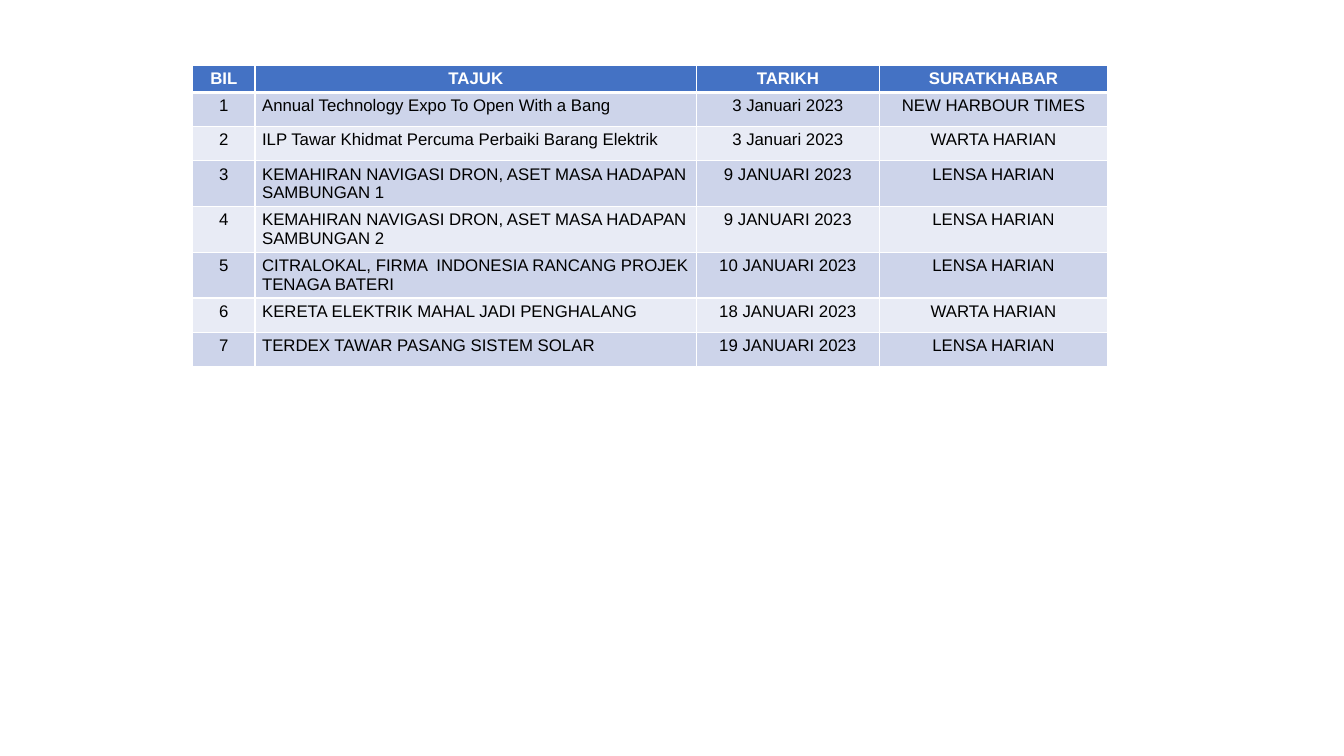
from typing import NamedTuple

from lxml.etree import SubElement
from pptx import Presentation
from pptx.dml.color import RGBColor
from pptx.enum.text import PP_ALIGN as Align
from pptx.oxml.ns import qn
from pptx.table import _Cell as Cell
from pptx.util import Inches, Pt

COLOURS = {
    "header": "4472C4",
    "odd_row": "CDD4EA",
    "even_row": "E8EBF5",
    "rule": "FFFFFF",
    "header_text": "FFFFFF",
    "body_text": "000000",
}
FONT, FONT_SIZE = "Arial", Pt(12)
THIN_RULE, HEADER_RULE = Pt(1), Pt(3)
HEADER_HEIGHT, ROW_HEIGHT = 0.22, 0.34
TABLE_LEFT, TABLE_TOP = 1.91, 0.65


class Column(NamedTuple):
    heading: str
    width: float
    body_align: Align = Align.CENTER


class Article(NamedTuple):
    number: str
    title: str
    date: str
    newspaper: str


COLUMNS = [
    Column("BIL", 0.62),
    Column("TAJUK", 4.38, Align.LEFT),
    Column("TARIKH", 1.81),
    Column("SURATKHABAR", 2.27),
]
ARTICLES = [
    Article("1", "Annual Technology Expo To Open With a Bang", "3 Januari 2023", "NEW HARBOUR TIMES"),
    Article("2", "ILP Tawar Khidmat Percuma Perbaiki Barang Elektrik", "3 Januari 2023", "WARTA HARIAN"),
    Article("3", "KEMAHIRAN NAVIGASI DRON, ASET MASA HADAPAN SAMBUNGAN 1", "9 JANUARI 2023", "LENSA HARIAN"),
    Article("4", "KEMAHIRAN NAVIGASI DRON, ASET MASA HADAPAN SAMBUNGAN 2", "9 JANUARI 2023", "LENSA HARIAN"),
    Article("5", "CITRALOKAL, FIRMA  INDONESIA RANCANG PROJEK TENAGA BATERI", "10 JANUARI 2023", "LENSA HARIAN"),
    Article("6", "KERETA ELEKTRIK MAHAL JADI PENGHALANG", "18 JANUARI 2023", "WARTA HARIAN"),
    Article("7", "TERDEX TAWAR PASANG SISTEM SOLAR", "19 JANUARI 2023", "LENSA HARIAN"),
]


def draw_rules(cell: Cell, top: int, bottom: int) -> None:
    """Put a solid border on all four sides of the cell."""
    properties = cell._tc.get_or_add_tcPr()
    widths = {"a:lnL": THIN_RULE, "a:lnR": THIN_RULE, "a:lnT": top, "a:lnB": bottom}
    for side, width in widths.items():
        rule = SubElement(properties, qn(side), w=str(int(width)))
        SubElement(SubElement(rule, qn("a:solidFill")), qn("a:srgbClr"), val=COLOURS["rule"])


def fill_cell(cell: Cell, text: str, row: int, align: Align) -> None:
    is_header = row == 0
    draw_rules(
        cell,
        top=HEADER_RULE if row == 1 else THIN_RULE,
        bottom=HEADER_RULE if is_header else THIN_RULE,
    )
    band = "header" if is_header else "odd_row" if row % 2 else "even_row"
    cell.fill.solid()
    cell.fill.fore_color.rgb = RGBColor.from_string(COLOURS[band])
    cell.margin_left = cell.margin_right = Inches(0.07)
    cell.margin_top = cell.margin_bottom = Inches(0.04)
    cell.text_frame.text = text
    paragraph = cell.text_frame.paragraphs[0]
    paragraph.alignment = align
    font = paragraph.runs[0].font
    font.name, font.size, font.bold = FONT, FONT_SIZE, is_header
    font.color.rgb = RGBColor.from_string(COLOURS["header_text" if is_header else "body_text"])


def main() -> None:
    deck = Presentation()
    deck.slide_width, deck.slide_height = Inches(13.33), Inches(7.5)
    slide = deck.slides.add_slide(deck.slide_layouts[6])

    row_heights = [HEADER_HEIGHT] + [ROW_HEIGHT] * len(ARTICLES)
    clippings = slide.shapes.add_table(
        len(row_heights), len(COLUMNS),
        Inches(TABLE_LEFT), Inches(TABLE_TOP),
        Inches(sum(column.width for column in COLUMNS)), Inches(sum(row_heights)),
    ).table
    for row, height in enumerate(row_heights):
        clippings.rows[row].height = Inches(height)
    for index, column in enumerate(COLUMNS):
        clippings.columns[index].width = Inches(column.width)
        fill_cell(clippings.cell(0, index), column.heading, 0, Align.CENTER)
        for row, article in enumerate(ARTICLES, start=1):
            fill_cell(clippings.cell(row, index), article[index], row, column.body_align)

    deck.save("out.pptx")


if __name__ == "__main__":
    main()
